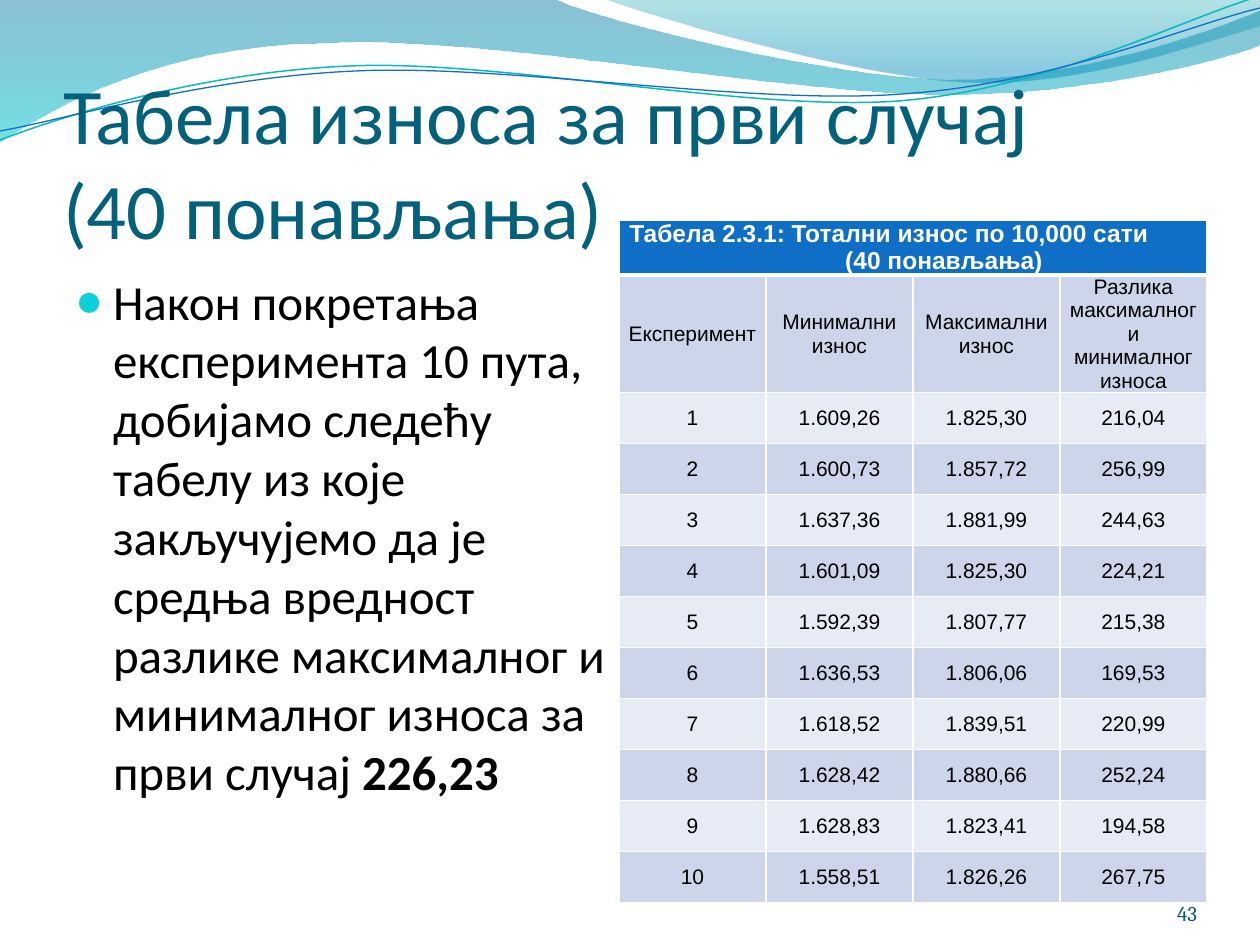
import pptx
import pptx.dml.color
import pptx.enum.text
import pptx.oxml
import pptx.oxml.ns
import pptx.util
from lxml import etree

# ---- Content ----
TITLE = "Табела износа за први случај (40 понављања)"
BODY_RUNS = [
    ("Након покретања експеримента 10 пута, добијамо следећу табелу из које "
     "закључујемо да је средња вредност разлике максималног и минималног "
     "износа за први случај ", False),
    ("226,23", True),
]
CAPTION = "Табела 2.3.1: Тотални износ по 10,000 сати (40 понављања)"
TABLE_ROWS = [
    ("Експеримент", "Минимални износ", "Максимални износ",
     "Разлика максималног и минималног износа"),
    ("1", "1.609,26", "1.825,30", "216,04"),
    ("2", "1.600,73", "1.857,72", "256,99"),
    ("3", "1.637,36", "1.881,99", "244,63"),
    ("4", "1.601,09", "1.825,30", "224,21"),
    ("5", "1.592,39", "1.807,77", "215,38"),
    ("6", "1.636,53", "1.806,06", "169,53"),
    ("7", "1.618,52", "1.839,51", "220,99"),
    ("8", "1.628,42", "1.880,66", "252,24"),
    ("9", "1.628,83", "1.823,41", "194,58"),
    ("10", "1.558,51", "1.826,26", "267,75"),
]
PAGE_NUMBER = "43"

THEME = {
    "heading_font": "Calibri", "table_font": "Arial", "number_font": "Cambria",
    "title": "04617B", "text": "000000", "bullet": "0BD0D9", "number": "045D75",
    "caption_fill": "0F6FC6", "caption_text": "FFFFFF", "border": "FFFFFF",
    "bands": ("CCD5EA", "E7EBF5"),
    "title_size": 45, "body_size": 28, "caption_size": 14, "cell_size": 12,
    "number_size": 12,
}

# Waves in px: one pair is a straight segment's end, three pairs are a Bezier curve
FILLED_WAVES = [
    {"start": (0, 0), "segments": [
        [(554, -1)],
        [(600, 21), (837, 79), (955, 79)],
        [(1075, 79), (1207, 33), (1260, 11)],
        [(1261, 45)],
        [(1239, 55), (1096, 96), (940, 94)],
        [(784, 94), (481, 35), (324, 43)],
        [(163, 45), (58, 105), (-1, 142)],
        [(0, 0)]],
     "stops": [(0, "0074A1", 45), (1, "00C6CF", 55)]},
    {"start": (604, -1), "segments": [
        [(641, 14), (859, 78), (969, 82)],
        [(1079, 87), (1211, 40), (1260, 26)],
        [(1260, 0)],
        [(604, -1)]],
     "stops": [(0, "00A1A9", 30), (0.8, "008BBF", 45)]},
]
LINE_WAVES = [
    {"start": (0, 140), "segments": [
        [(60, 117), (199, 72), (349, 66)],
        [(498, 59), (747, 112), (898, 101)],
        [(1049, 89), (1182, 19), (1257, -3)]],
     "color": "0AB8BF", "width": 0.85},
    {"start": (0, 131), "segments": [
        [(59, 121), (207, 77), (357, 71)],
        [(508, 64), (752, 106), (903, 94)],
        [(1053, 84), (1186, 26), (1260, 8)]],
     "color": "0F6FC6", "width": 0.75},
]
EMU_PER_PX = 914400 / 126


def px(value):
    return pptx.util.Emu(round(value * EMU_PER_PX))


def rgb(value):
    return pptx.dml.color.RGBColor.from_string(value)


def place(shape, left, top, width, height):
    shape.left, shape.top, shape.width, shape.height = map(px, (left, top, width, height))


def add_run(paragraph, text, font, size, color, bold=False):
    run = paragraph.add_run()
    run.text = text
    run.font.name, run.font.size = font, pptx.util.Pt(size)
    run.font.color.rgb, run.font.bold = rgb(color), bold


def set_indent(paragraph, left, first_line):
    properties = paragraph._p.get_or_add_pPr()
    properties.set("marL", str(px(left)))
    properties.set("indent", str(px(first_line)))
    return properties


def set_frame(text_frame, anchor, margins):
    text_frame.word_wrap = True
    text_frame.auto_size = pptx.enum.text.MSO_AUTO_SIZE.NONE
    text_frame.vertical_anchor = anchor
    (text_frame.margin_left, text_frame.margin_top,
     text_frame.margin_right, text_frame.margin_bottom) = map(px, margins)


def add_wave(slide, wave, close):
    points = [(px(x), px(y)) for segment in wave["segments"] for x, y in segment]
    builder = slide.shapes.build_freeform(*map(px, wave["start"]), scale=1.0)
    builder.add_line_segments(points, close=close)
    shape = builder.convert_to_shape()
    shape.shadow.inherit = False
    # Each three line ends of a curved segment become one Bezier command
    commands = iter(list(shape.element.iter(pptx.oxml.ns.qn("a:lnTo"))))
    for segment in wave["segments"]:
        group = [next(commands) for _ in segment]
        if len(group) == 3:
            curve = etree.Element(pptx.oxml.ns.qn("a:cubicBezTo"))
            group[0].addprevious(curve)
            for command in group:
                curve.append(command[0])
                command.getparent().remove(command)
    return shape


def set_border(cell, side, width):
    line = pptx.oxml.parse_xml(
        f'<a:{side} {pptx.oxml.ns.nsdecls("a")} w="{pptx.util.Pt(width)}"><a:solidFill>'
        f'<a:srgbClr val="{THEME["border"]}"/></a:solidFill></a:{side}>')
    cell._tc.get_or_add_tcPr().append(line)


def format_cell(cell, fill, bottom_width=1):
    # Borders come before the fill in the cell properties
    for side in ("lnL", "lnR", "lnT", "lnB"):
        set_border(cell, side, bottom_width if side == "lnB" else 1)
    cell.fill.solid()
    cell.fill.fore_color.rgb = rgb(fill)
    cell.vertical_anchor = pptx.enum.text.MSO_ANCHOR.MIDDLE
    cell.margin_left = cell.margin_right = px(9)
    cell.margin_top = cell.margin_bottom = 0


ALIGN = pptx.enum.text.PP_ALIGN
ANCHOR = pptx.enum.text.MSO_ANCHOR

presentation = pptx.Presentation()
presentation.slide_width, presentation.slide_height = px(1260), px(945)
slide = presentation.slides.add_slide(presentation.slide_layouts[1])
title, body = slide.placeholders

# ---- Waves along the top ----
for wave in FILLED_WAVES:
    shape = add_wave(slide, wave, close=True)
    shape.line.fill.background()
    shape.fill.gradient()
    shape.fill.gradient_angle = 270
    for stop, (position, color, _) in zip(shape.fill.gradient_stops, wave["stops"]):
        stop.position, stop.color.rgb = position, rgb(color)
    colors = list(shape.element.iter(pptx.oxml.ns.qn("a:srgbClr")))
    for element, (_, _, opacity) in zip(colors, wave["stops"]):
        etree.SubElement(element, pptx.oxml.ns.qn("a:alpha"), val=str(opacity * 1000))
for wave in LINE_WAVES:
    shape = add_wave(slide, wave, close=False)
    shape.fill.background()
    shape.line.color.rgb, shape.line.width = rgb(wave["color"]), pptx.util.Pt(wave["width"])

# Text goes in front of the waves
for placeholder in (title, body):
    placeholder.element.getparent().append(placeholder.element)

# ---- Title: the right margin wraps it before the bracket ----
place(title, 63, 97, 1134, 158)
set_frame(title.text_frame, ANCHOR.BOTTOM, (0, 6, 100, 0))
paragraph = title.text_frame.paragraphs[0]
paragraph.alignment = ALIGN.LEFT
add_run(paragraph, TITLE, THEME["heading_font"], THEME["title_size"], THEME["title"])

# ---- Body ----
place(body, 63, 265, 557, 611)
set_frame(body.text_frame, ANCHOR.TOP, (12, 6, 12, 6))
paragraph = body.text_frame.paragraphs[0]
for text, bold in BODY_RUNS:
    add_run(paragraph, text, THEME["heading_font"], THEME["body_size"], THEME["text"], bold)
properties = set_indent(paragraph, 38, -38)
for bullet in (f'buClr {{}}><a:srgbClr val="{THEME["bullet"]}"/></a:buClr>',
               'buSzPct {} val="95000"/>', 'buChar {} char="●"/>'):
    properties.append(pptx.oxml.parse_xml(
        "<a:" + bullet.format(pptx.oxml.ns.nsdecls("a"))))

# ---- Table ----
row_count, column_count = len(TABLE_ROWS) + 1, len(TABLE_ROWS[0])
table = slide.shapes.add_table(row_count, column_count, px(619), px(220),
                               px(147 * column_count), px(51 * row_count)).table
for cell in table.rows[0].cells:
    format_cell(cell, THEME["caption_fill"], bottom_width=3)
caption = table.cell(0, 0)
caption.merge(table.cell(0, column_count - 1))
caption.margin_right = px(57)
paragraph = caption.text_frame.paragraphs[0]
paragraph.alignment = ALIGN.CENTER
set_indent(paragraph, 110, -110)
add_run(paragraph, CAPTION, THEME["table_font"], THEME["caption_size"],
        THEME["caption_text"], True)
for row, values in enumerate(TABLE_ROWS):
    for column, text in enumerate(values):
        cell = table.cell(row + 1, column)
        format_cell(cell, THEME["bands"][row % 2])
        paragraph = cell.text_frame.paragraphs[0]
        paragraph.alignment = ALIGN.CENTER
        add_run(paragraph, text, THEME["table_font"], THEME["cell_size"], THEME["text"])

# ---- Page number ----
number = slide.shapes.add_textbox(px(1092), px(876), px(105), px(50))
set_frame(number.text_frame, ANCHOR.BOTTOM, (0, 0, 0, 0))
paragraph = number.text_frame.paragraphs[0]
paragraph.alignment = ALIGN.RIGHT
add_run(paragraph, PAGE_NUMBER, THEME["number_font"], THEME["number_size"], THEME["number"])

presentation.save("out.pptx")
